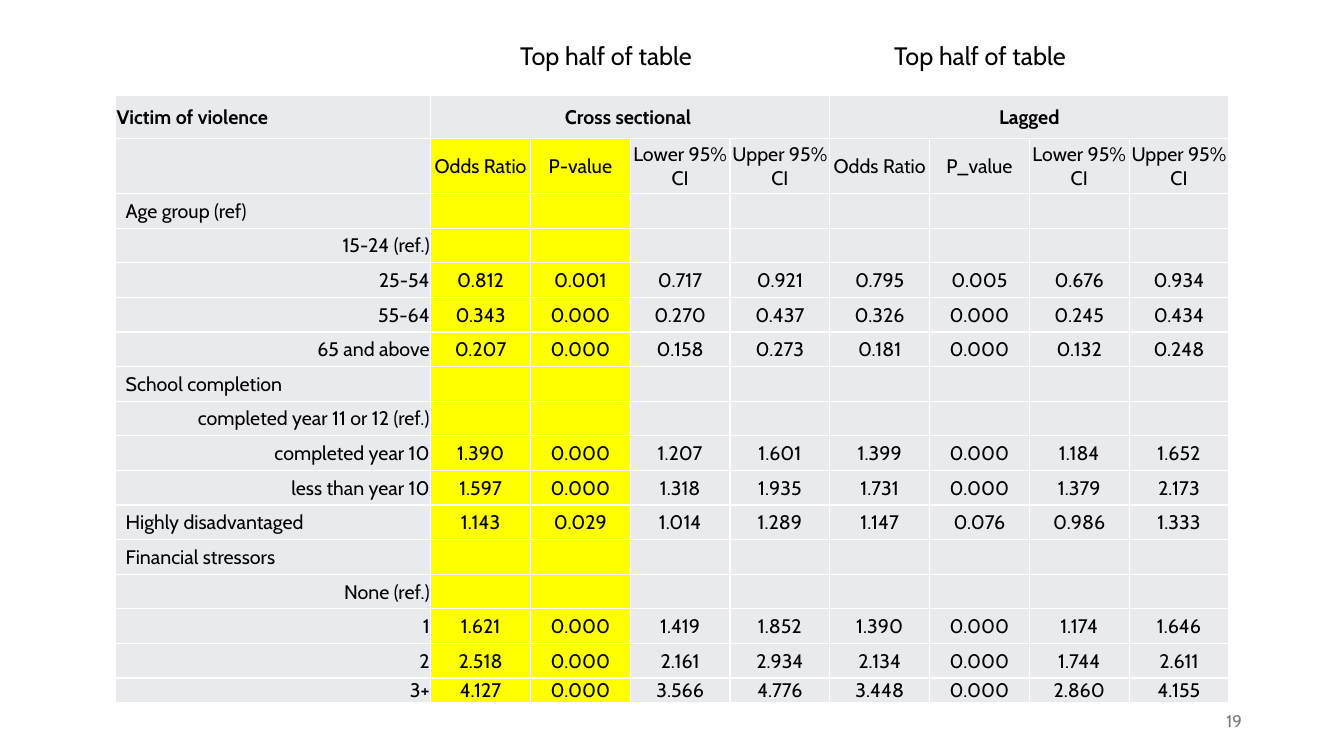
from lxml.etree import SubElement as Sub
from pptx import Presentation
from pptx.dml.color import RGBColor
from pptx.enum.text import MSO_ANCHOR as Anchor, PP_ALIGN as Align
from pptx.oxml.ns import qn
from pptx.util import Pt

PX = 3048
BLACK = RGBColor(0x00, 0x00, 0x00)
WHITE = RGBColor(0xFF, 0xFF, 0xFF)
GREY = RGBColor(0x79, 0x79, 0x79)
PALE = RGBColor(0xE8, 0xEA, 0xED)
YELLOW = RGBColor(0xFF, 0xFF, 0x00)

GROUPS = ["Age group (ref)", "School completion", "Highly disadvantaged", "Financial stressors"]
ROWS = [
    ["Victim of violence", "Cross sectional ", "", "", "", "Lagged"],
    ["", "Odds Ratio", "P-value", "Lower 95% CI", "Upper 95% CI",
     "Odds Ratio", "P_value", "Lower 95% CI", "Upper 95% CI"],
    ["Age group (ref)"],
    ["15-24 (ref.)"],
    ["25-54", "0.812", "0.001", "0.717", "0.921", "0.795", "0.005", "0.676", "0.934"],
    ["55-64", "0.343", "0.000", "0.270", "0.437", "0.326", "0.000", "0.245", "0.434"],
    ["65 and above", "0.207", "0.000", "0.158", "0.273", "0.181", "0.000", "0.132", "0.248"],
    ["School completion"],
    ["completed year 11 or 12 (ref.)"],
    ["completed year 10", "1.390", "0.000", "1.207", "1.601", "1.399", "0.000", "1.184", "1.652"],
    ["less than year 10", "1.597", "0.000", "1.318", "1.935", "1.731", "0.000", "1.379", "2.173"],
    ["Highly disadvantaged", "1.143", "0.029", "1.014", "1.289", "1.147", "0.076", "0.986", "1.333"],
    ["Financial stressors"],
    ["None (ref.)"],
    ["1", "1.621", "0.000", "1.419", "1.852", "1.390", "0.000", "1.174", "1.646"],
    ["2", "2.518", "0.000", "2.161", "2.934", "2.134", "0.000", "1.744", "2.611"],
    ["3+", "4.127", "0.000", "3.566", "4.776", "3.448", "0.000", "2.860", "4.155"],
]
WIDTHS = [938] + [297] * 8
HEIGHTS = [129, 164] + [103] * 14 + [40]


def style(para, size, color, align, bold=False):
    para.alignment = align
    font = para.font
    font.name = "Cabin"
    font.size = Pt(size)
    font.bold = bold
    font.color.rgb = color


def border(cell):
    props = cell._tc.get_or_add_tcPr()
    for i, side in enumerate(["lnL", "lnR", "lnT", "lnB"]):
        line = Sub(props, qn("a:" + side), w=str(Pt(1)))
        fill = Sub(line, qn("a:solidFill"))
        Sub(fill, qn("a:srgbClr"), val=str(WHITE))
        props.insert(i, line)


deck = Presentation()
deck.slide_width = 4000 * PX
deck.slide_height = 2250 * PX
slide = deck.slides.add_slide(deck.slide_layouts[6])

frame = slide.shapes.add_table(len(ROWS), len(WIDTHS), 344 * PX, 283 * PX,
                               sum(WIDTHS) * PX, sum(HEIGHTS) * PX)
table = frame.table
table.first_row = False
table.horz_banding = False
for col, width in zip(table.columns, WIDTHS):
    col.width = width * PX
for row, height in zip(table.rows, HEIGHTS):
    row.height = height * PX

for r, texts in enumerate(ROWS):
    for c in range(len(WIDTHS)):
        cell = table.cell(r, c)
        label = texts[c] if c < len(texts) else ""
        group = label in GROUPS
        cell.text = label
        cell.vertical_anchor = Anchor.MIDDLE
        cell.margin_left = (30 if group else 3) * PX
        cell.margin_right = cell.margin_top = 3 * PX
        cell.margin_bottom = 0
        cell.fill.solid()
        cell.fill.fore_color.rgb = YELLOW if r > 0 and c in (1, 2) else PALE
        border(cell)
        if c > 0:
            align = Align.CENTER
        elif r == 0 or group:
            align = Align.LEFT
        else:
            align = Align.RIGHT
        style(cell.text_frame.paragraphs[0], 14, BLACK, align, r == 0)

for first in (1, 5):
    table.cell(0, first).merge(table.cell(0, first + 3))

NOTES = [
    ("19", 2826, 2085, 900, 12, GREY, Align.RIGHT, Anchor.MIDDLE),
    ("Top half of table ", 1311, 105, 1002, 18, BLACK, Align.CENTER, Anchor.TOP),
    ("Top half of table ", 2424, 105, 1002, 18, BLACK, Align.CENTER, Anchor.TOP),
]
for text, left, top, width, size, color, align, anchor in NOTES:
    box = slide.shapes.add_textbox(left * PX, top * PX, width * PX, 120 * PX)
    body = box.text_frame
    body.word_wrap = True
    body.vertical_anchor = anchor
    body.text = text
    style(body.paragraphs[0], size, color, align)

deck.save("out.pptx")
